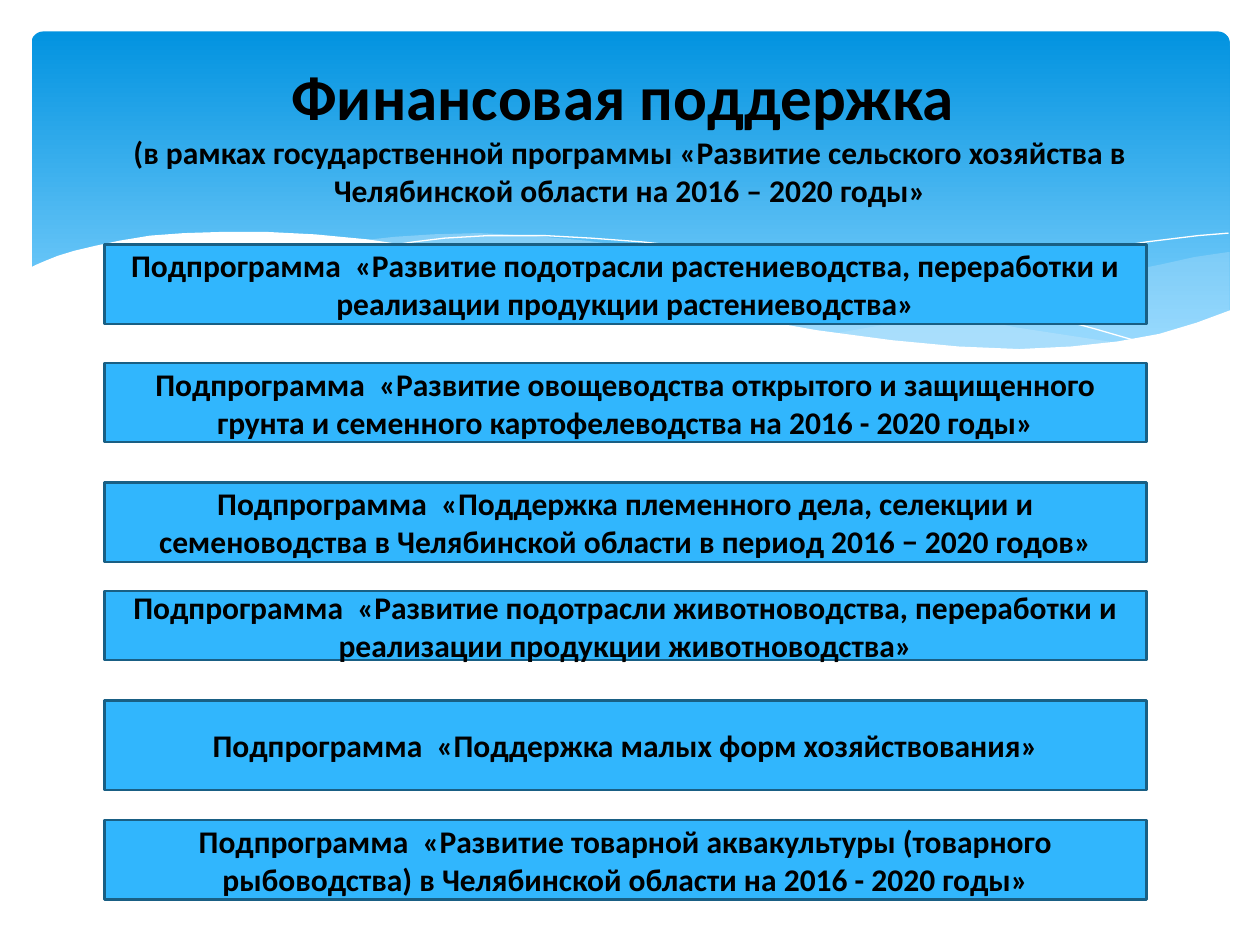
from dataclasses import dataclass
from typing import Optional

import pptx
import pptx.dml.color
import pptx.enum.shapes
import pptx.enum.text
import pptx.oxml
import pptx.oxml.ns
import pptx.util

RGBColor = pptx.dml.color.RGBColor
MSO_SHAPE = pptx.enum.shapes.MSO_SHAPE

PX = 9144  # EMU per px, 100 px to the inch
FONT = "Calibri"
BLACK = RGBColor(0x00, 0x00, 0x00)
WHITE = RGBColor(0xFF, 0xFF, 0xFF)
SKY_TOP = RGBColor(0x02, 0x93, 0xE0)
SKY_BOTTOM = RGBColor(0x83, 0xD3, 0xFE)
MIST = RGBColor(0xC6, 0xE7, 0xFC)
BAR_FILL = RGBColor(0x31, 0xB6, 0xFD)
BAR_LINE = RGBColor(0x19, 0x5F, 0x84)

Points = list[tuple[int, int]]


@dataclass(frozen=True)
class Wave:
    """A filled band, or an open white hairline when fill is None."""
    points: Points
    fill: Optional[RGBColor] = None
    opacity: int = 100


@dataclass(frozen=True)
class Subprogram:
    top: int
    height: int
    title: str


WAVES = [
    Wave([(975, 200), (948, 204), (921, 210), (891, 216), (861, 223), (805, 237),
          (753, 248), (706, 257), (661, 265), (691, 269), (719, 272), (745, 275),
          (769, 277), (803, 278), (835, 277), (863, 275), (889, 272), (913, 267),
          (935, 262), (949, 257), (963, 252), (976, 247), (976, 200)], MIST, 29),
    Wave([(893, 273), (866, 269), (807, 260), (741, 247), (668, 231), (629, 222),
          (584, 211), (541, 203), (502, 196), (465, 191), (420, 187), (380, 185),
          (344, 186), (313, 188), (286, 191), (323, 196), (362, 203), (404, 211),
          (449, 222), (530, 240), (601, 255), (665, 266), (722, 274), (773, 277),
          (807, 278), (838, 278), (867, 276)], MIST, 40),
    Wave([(309, 195), (328, 192), (353, 189), (387, 187), (433, 187), (469, 189),
          (510, 192), (556, 197), (608, 204), (665, 213), (727, 226), (795, 241),
          (869, 261), (907, 272)]),
    Wave([(613, 257), (653, 246), (695, 235), (748, 223), (806, 210), (866, 199),
          (910, 192), (951, 187), (975, 185)]),
    Wave([(977, 246), (950, 256), (920, 265), (887, 271), (850, 275), (809, 277),
          (761, 275), (708, 270), (648, 262), (603, 254), (555, 245), (503, 233),
          (447, 220), (391, 207), (340, 197), (292, 190), (250, 186), (211, 184),
          (177, 184), (146, 185), (119, 187), (95, 191), (76, 195), (59, 199),
          (46, 203), (36, 207), (29, 210), (23, 213), (23, 329), (977, 329)], WHITE),
]

BAR_LEFT, BAR_WIDTH = 83, 827
SUBPROGRAMS = [
    Subprogram(194, 63, "«Развитие подотрасли растениеводства, переработки и "
                        "реализации продукции растениеводства»"),
    Subprogram(288, 63, "«Развитие овощеводства открытого и защищенного грунта и "
                        "семенного картофелеводства на 2016 - 2020 годы»"),
    Subprogram(383, 63, "«Поддержка племенного дела, селекции и семеноводства в "
                        "Челябинской области в период 2016 − 2020 годов»"),
    Subprogram(469, 55, "«Развитие подотрасли животноводства, переработки и "
                        "реализации продукции животноводства»"),
    Subprogram(556, 71, "«Поддержка малых форм хозяйствования»"),
    Subprogram(651, 63, "«Развитие товарной аквакультуры (товарного рыбоводства) в "
                        "Челябинской области на 2016 - 2020 годы»"),
]


def px(*lengths: int) -> list[int]:
    return [length * PX for length in lengths]


def add_run(paragraph, text: str, size: int) -> None:
    run = paragraph.add_run()
    run.text = text
    run.font.name = FONT
    run.font.size = pptx.util.Pt(size)
    run.font.bold = True
    run.font.color.rgb = BLACK


def centred_paragraph(shape):
    """Centre the shape's text both ways and return its first paragraph."""
    frame = shape.text_frame
    frame.word_wrap = True
    frame.vertical_anchor = pptx.enum.text.MSO_ANCHOR.MIDDLE
    paragraph = frame.paragraphs[0]
    paragraph.alignment = pptx.enum.text.PP_ALIGN.CENTER
    return paragraph


def draw_sky(shapes) -> None:
    sky = shapes.add_shape(MSO_SHAPE.ROUNDED_RECTANGLE, *px(25, 25, 951, 270))
    sky.adjustments[0] = 0.034
    sky.shadow.inherit = False
    sky.line.fill.background()
    sky.fill.gradient()
    sky.fill.gradient_angle = 270
    top, bottom = sky.fill.gradient_stops
    top.color.rgb, top.position = SKY_TOP, 0
    bottom.color.rgb, bottom.position = SKY_BOTTOM, 0.9


def draw_wave(shapes, wave: Wave) -> None:
    closed = wave.fill is not None
    builder = shapes.build_freeform(*wave.points[0], scale=PX)
    builder.add_line_segments(wave.points[1:], close=closed)
    band = builder.convert_to_shape()
    band.shadow.inherit = False
    if not closed:
        band.fill.background()
        band.line.color.rgb = WHITE
        band.line.width = pptx.util.Pt(0)
        return
    band.line.fill.background()
    band.fill.solid()
    band.fill.fore_color.rgb = wave.fill
    if wave.opacity < 100:
        color = band.fill._xPr.find(".//" + pptx.oxml.ns.qn("a:srgbClr"))
        alpha = color.makeelement(pptx.oxml.ns.qn("a:alpha"),
                                  {"val": str(wave.opacity * 1000)})
        color.append(alpha)


def draw_heading(shapes) -> None:
    heading = centred_paragraph(shapes.add_textbox(*px(50, 37, 900, 137)))
    add_run(heading, "Финансовая поддержка ", 36)
    heading.add_line_break()
    add_run(heading, "(в рамках государственной программы «Развитие сельского "
                     "хозяйства в Челябинской области на 2016 – 2020 годы»", 18)


def draw_subprogram(shapes, subprogram: Subprogram) -> None:
    bar = shapes.add_shape(MSO_SHAPE.RECTANGLE, *px(
        BAR_LEFT, subprogram.top, BAR_WIDTH, subprogram.height))
    bar.shadow.inherit = False
    bar.fill.solid()
    bar.fill.fore_color.rgb = BAR_FILL
    bar.line.color.rgb = BAR_LINE
    bar.line.width = pptx.util.Pt(1.25)
    add_run(centred_paragraph(bar), f"Подпрограмма  {subprogram.title}", 18)


def main() -> None:
    deck = pptx.Presentation()
    deck.slide_width, deck.slide_height = px(1000, 750)
    shapes = deck.slides.add_slide(deck.slide_layouts[6]).shapes
    draw_sky(shapes)
    for wave in WAVES:
        draw_wave(shapes, wave)
    draw_heading(shapes)
    for subprogram in SUBPROGRAMS:
        draw_subprogram(shapes, subprogram)
    deck.save("out.pptx")


if __name__ == "__main__":
    main()
